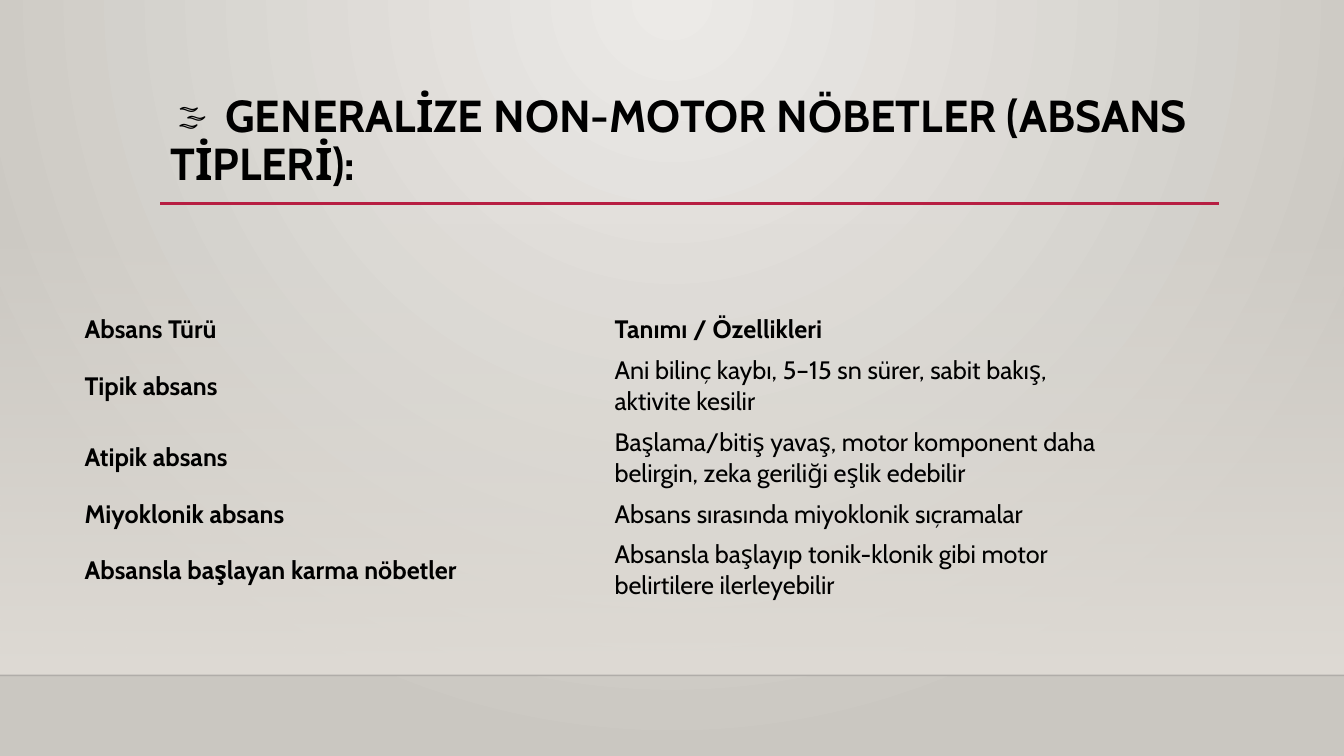
from lxml import etree
from pptx import Presentation, util as u
from pptx.dml.color import RGBColor
from pptx.enum import shapes, text
from pptx.oxml import parse_xml
from pptx.oxml.ns import nsdecls, qn

Pt = u.Pt
WIDTH, HEIGHT = 960, 540
FONT, BLACK = "Cabin", "000000"
ICON = "🌫️ "
TITLE = "GENERALİZE NON-MOTOR NÖBETLER (ABSANS TİPLERİ):"
SEIZURES = [
    ("Absans Türü", "Tanımı / Özellikleri", 1),
    ("Tipik absans", "Ani bilinç kaybı, 5–15 sn sürer, sabit bakış, aktivite kesilir", 2),
    ("Atipik absans", "Başlama/bitiş yavaş, motor komponent daha belirgin, zeka geriliği eşlik edebilir", 2),
    ("Miyoklonik absans", "Absans sırasında miyoklonik sıçramalar", 1),
    ("Absansla başlayan karma nöbetler", "Absansla başlayıp tonik-klonik gibi motor belirtilere ilerleyebilir", 2),
]
FLOOR_Y, WALL_TOP = 482.4, 159
RULE_Y, RULE_LEFT, RULE_RIGHT = 145.5, 114.5, 871
TABLE_LEFT, TABLE_TOP, COLUMN = 53.3, 221, 378.5
LINE, PADDING = 22, 7.2


def color(value):
    return RGBColor.from_string(value)


def write(paragraph, words, size=18, bold=False):
    run = paragraph.add_run()
    run.text = words
    run.font.name, run.font.size, run.font.bold = FONT, Pt(size), bold
    run.font.color.rgb = color(BLACK)


def gradient(fill_parent, stops, direction):
    marks = "".join(
        f'<a:gs pos="{at * 1000}"><a:srgbClr val="{value}"><a:alpha val="{alpha * 1000}"/></a:srgbClr></a:gs>'
        for at, value, alpha in stops)
    new = parse_xml(f'<a:gradFill {nsdecls("a")} rotWithShape="1"><a:gsLst>{marks}</a:gsLst>{direction}</a:gradFill>')
    old = fill_parent.find(qn("a:gradFill"))
    fill_parent.replace(old, new)


def rule(x1, x2, y, value, width, opacity=100):
    line = slide.shapes.add_connector(shapes.MSO_CONNECTOR.STRAIGHT, Pt(x1), Pt(y), Pt(x2), Pt(y))
    line.line.color.rgb = color(value)
    line.line.width = Pt(width)
    etree.SubElement(line._element.spPr, qn("a:effectLst"))
    if opacity < 100:
        tint = line._element.spPr.find(".//" + qn("a:srgbClr"))
        etree.SubElement(tint, qn("a:alpha"), val=str(opacity * 1000))


deck = Presentation()
deck.slide_width, deck.slide_height = Pt(WIDTH), Pt(HEIGHT)
slide = deck.slides.add_slide(deck.slide_layouts[6])

slide.background.fill.gradient()
gradient(slide._element.cSld.bg.bgPr, [(0, "ECEAE7", 100), (100, "CAC7C1", 100)],
         '<a:path path="circle"><a:fillToRect l="43000" t="0" r="43000" b="100000"/></a:path>')

wall = slide.shapes.add_shape(shapes.MSO_SHAPE.RECTANGLE, 0, Pt(WALL_TOP), Pt(WIDTH), Pt(FLOOR_Y - WALL_TOP))
wall.shadow.inherit = False
wall.line.fill.background()
wall.fill.gradient()
gradient(wall._element.spPr, [(0, "DFDBD5", 0), (100, "DFDBD5", 100)], '<a:lin ang="5400000" scaled="0"/>')

rule(0, WIDTH, FLOOR_Y, "000001", 1, opacity=20)
rule(RULE_LEFT, RULE_RIGHT, RULE_Y, "B71E42", 2.5)

heading = slide.shapes.add_textbox(Pt(RULE_LEFT), Pt(63.4), Pt(756), Pt(82.8)).text_frame
heading.word_wrap = True
heading.vertical_anchor = text.MSO_ANCHOR.TOP
heading.paragraphs[0].line_spacing = 0.9
write(heading.paragraphs[0], ICON, size=32)
write(heading.paragraphs[0], TITLE, size=32, bold=True)

heights = [lines * LINE + PADDING for _, _, lines in SEIZURES]
table = slide.shapes.add_table(len(SEIZURES), 2, Pt(TABLE_LEFT), Pt(TABLE_TOP),
                               Pt(2 * COLUMN), Pt(sum(heights))).table
table.first_row = table.horz_banding = False
for column in table.columns:
    column.width = Pt(COLUMN)
for r, (kind, description, _) in enumerate(SEIZURES):
    table.rows[r].height = Pt(heights[r])
    for c, words in enumerate((kind, description)):
        cell = table.cell(r, c)
        cell.fill.background()
        cell.vertical_anchor = text.MSO_ANCHOR.MIDDLE
        write(cell.text_frame.paragraphs[0], words, bold=r == 0 or c == 0)
        for side in ("lnL", "lnR", "lnT", "lnB"):
            border = parse_xml(f'<a:{side} {nsdecls("a")} w="0"><a:noFill/></a:{side}>')
            cell._tc.tcPr.insert(("lnL", "lnR", "lnT", "lnB").index(side), border)

deck.save("out.pptx")
